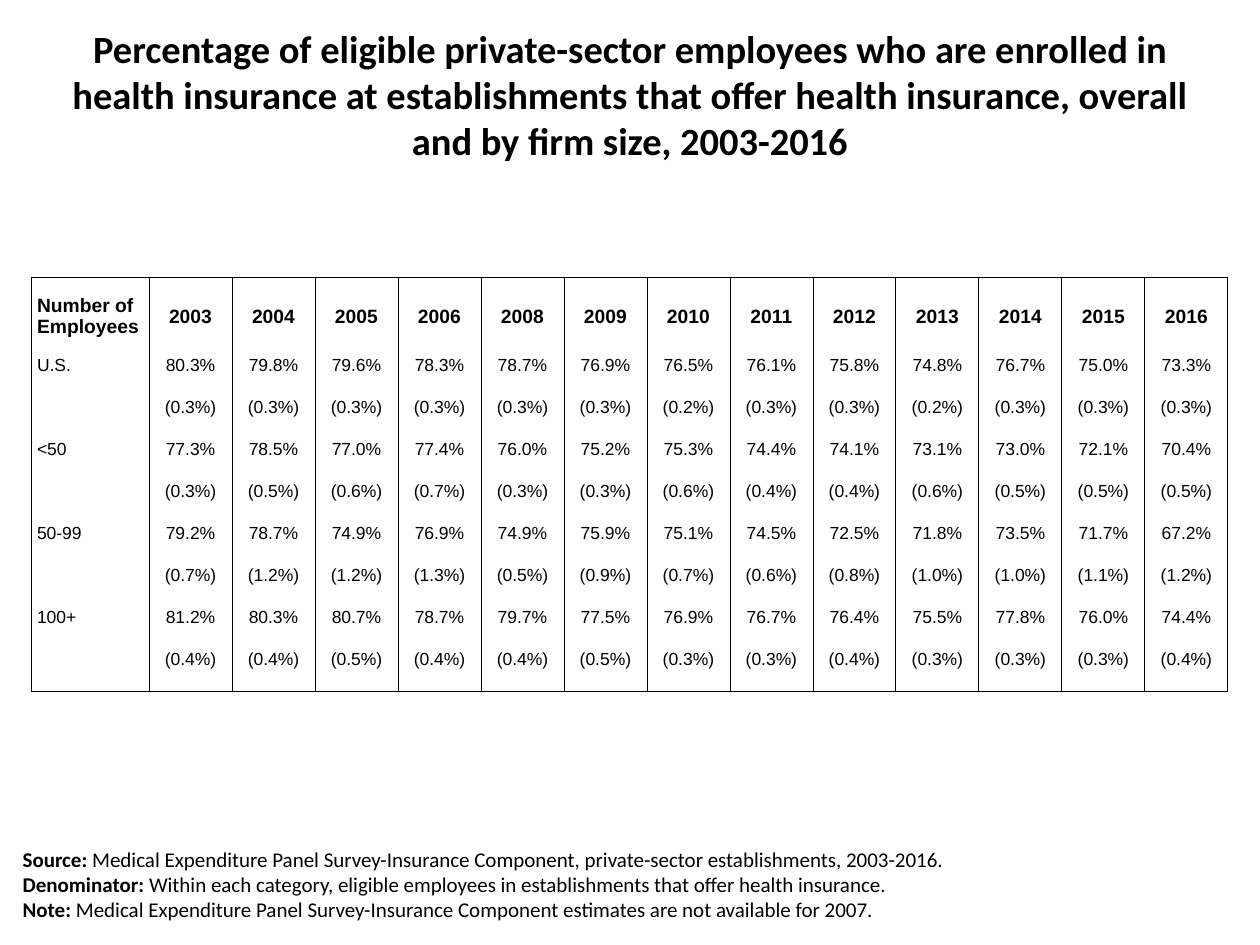
from lxml.etree import SubElement
from pptx import Presentation
from pptx.dml.color import RGBColor
from pptx.enum.text import MSO_ANCHOR, MSO_AUTO_SIZE, PP_ALIGN
from pptx.oxml.ns import qn
from pptx.util import Emu, Pt

BLACK = RGBColor(0x00, 0x00, 0x00)
WHITE = RGBColor(0xFF, 0xFF, 0xFF)
NO_GRID_STYLE = "{2D5ABB26-0587-4C30-8999-92F81FD0307C}"

TITLE = (
    "Percentage of eligible private-sector employees who are enrolled in health insurance "
    "at establishments that offer health insurance, overall and by firm size, 2003-2016"
)
YEARS = [2003, 2004, 2005, 2006, 2008, 2009, 2010, 2011, 2012, 2013, 2014, 2015, 2016]
GROUPS = [
    ("U.S.",
     [80.3, 79.8, 79.6, 78.3, 78.7, 76.9, 76.5, 76.1, 75.8, 74.8, 76.7, 75.0, 73.3],
     [0.3, 0.3, 0.3, 0.3, 0.3, 0.3, 0.2, 0.3, 0.3, 0.2, 0.3, 0.3, 0.3]),
    ("<50",
     [77.3, 78.5, 77.0, 77.4, 76.0, 75.2, 75.3, 74.4, 74.1, 73.1, 73.0, 72.1, 70.4],
     [0.3, 0.5, 0.6, 0.7, 0.3, 0.3, 0.6, 0.4, 0.4, 0.6, 0.5, 0.5, 0.5]),
    ("50-99",
     [79.2, 78.7, 74.9, 76.9, 74.9, 75.9, 75.1, 74.5, 72.5, 71.8, 73.5, 71.7, 67.2],
     [0.7, 1.2, 1.2, 1.3, 0.5, 0.9, 0.7, 0.6, 0.8, 1.0, 1.0, 1.1, 1.2]),
    ("100+",
     [81.2, 80.3, 80.7, 78.7, 79.7, 77.5, 76.9, 76.7, 76.4, 75.5, 77.8, 76.0, 74.4],
     [0.4, 0.4, 0.5, 0.4, 0.4, 0.5, 0.3, 0.3, 0.4, 0.3, 0.3, 0.3, 0.4]),
]
FOOTNOTES = [
    ("Source: ", "Medical Expenditure Panel Survey-Insurance Component, "
                 "private-sector establishments, 2003-2016."),
    ("Denominator: ", "Within each category, eligible employees in establishments "
                      "that offer health insurance."),
    ("Note: ", "Medical Expenditure Panel Survey-Insurance Component estimates "
               "are not available for 2007."),
]

TITLE_BOX = (58, 10, 1144, 168)
FOOTNOTE_BOX = (10, 840, 966, 95)
TABLE_LEFT, TABLE_TOP = 31, 277
LABEL_WIDTH, YEAR_WIDTH = 118, 83
HEADER_HEIGHT, ROW_HEIGHT = 79, 42
LABEL_INDENT = 6


def px(value):
    return Emu(round(value * 914400 / 126))


def place(shape, box):
    shape.left, shape.top, shape.width, shape.height = map(px, box)


def format_font(font, name, size, bold):
    font.name, font.size, font.bold = name, Pt(size), bold
    font.color.rgb = BLACK


def add_border(cell, side):
    line = SubElement(cell._tc.get_or_add_tcPr(), qn(f"a:ln{side}"), w=str(Pt(0.5)))
    SubElement(SubElement(line, qn("a:solidFill")), qn("a:srgbClr"), val=str(BLACK))


def fill_title(title):
    place(title, TITLE_BOX)
    frame = title.text_frame
    frame.text = TITLE
    frame.auto_size = MSO_AUTO_SIZE.NONE
    frame.vertical_anchor = MSO_ANCHOR.MIDDLE
    frame.paragraphs[0].alignment = PP_ALIGN.CENTER
    format_font(frame.paragraphs[0].runs[0].font, "Calibri", 22, True)


def fill_footnotes(body):
    place(body, FOOTNOTE_BOX)
    frame = body.text_frame
    frame.text = "\n".join(label for label, _ in FOOTNOTES)
    frame.auto_size = MSO_AUTO_SIZE.NONE
    for paragraph, (label, note) in zip(frame.paragraphs, FOOTNOTES):
        properties = paragraph._p.get_or_add_pPr()
        properties.set("marL", "0")
        properties.set("indent", "0")
        SubElement(properties, qn("a:buNone"))
        paragraph.space_before = Pt(0)
        paragraph.add_run().text = note
        for run, bold in zip(paragraph.runs, (True, False)):
            format_font(run.font, "Calibri", 12, bold)


def format_cell(cell, text, is_header, is_label, is_last):
    cell.margin_left = cell.margin_right = cell.margin_top = cell.margin_bottom = 0
    cell.vertical_anchor = MSO_ANCHOR.MIDDLE if is_header else MSO_ANCHOR.TOP
    for side in "LR" + "T" * is_header + "B" * is_last:
        add_border(cell, side)
    cell.fill.solid()
    cell.fill.fore_color.rgb = WHITE
    cell.text = text
    paragraph = cell.text_frame.paragraphs[0]
    if is_label:
        paragraph._p.get_or_add_pPr().set("marL", str(px(LABEL_INDENT)))
    else:
        paragraph.alignment = PP_ALIGN.CENTER
    format_font(paragraph.font, "Arial", 11 if is_header else 10, is_header)
    for run in paragraph.runs:
        format_font(run.font, "Arial", 11 if is_header else 10, is_header)


def add_enrollment_table(slide):
    rows = [["Number of Employees", *map(str, YEARS)]]
    for label, rates, errors in GROUPS:
        rows.append([label, *(f"{rate:.1f}%" for rate in rates)])
        rows.append(["", *(f"({error:.1f}%)" for error in errors)])
    widths = [LABEL_WIDTH] + [YEAR_WIDTH] * len(YEARS)
    heights = [HEADER_HEIGHT] + [ROW_HEIGHT] * (len(rows) - 1)

    frame = slide.shapes.add_table(
        len(rows), len(widths), px(TABLE_LEFT), px(TABLE_TOP), px(sum(widths)), px(sum(heights)))
    table = frame.table
    table.first_row = table.horz_banding = False
    table._tbl.tblPr.find(qn("a:tableStyleId")).text = NO_GRID_STYLE
    for column, width in zip(table.columns, widths):
        column.width = px(width)
    for row, height in zip(table.rows, heights):
        row.height = px(height)
    for r, texts in enumerate(rows):
        for c, text in enumerate(texts):
            format_cell(table.cell(r, c), text, r == 0, c == 0, r == len(rows) - 1)


def main():
    presentation = Presentation()
    presentation.slide_width, presentation.slide_height = px(1260), px(945)
    slide = presentation.slides.add_slide(presentation.slide_layouts[1])
    fill_title(slide.shapes.title)
    fill_footnotes(slide.placeholders[1])
    add_enrollment_table(slide)
    presentation.save("out.pptx")


if __name__ == "__main__":
    main()
